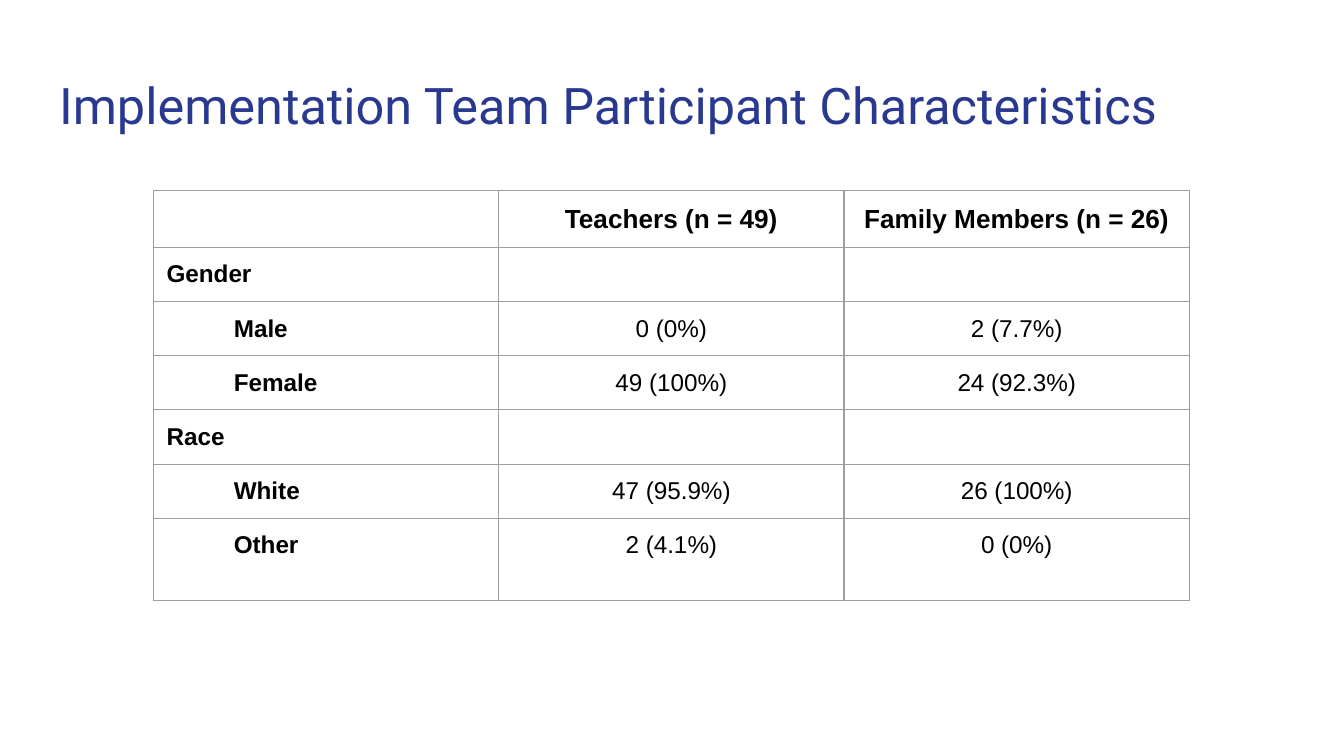
from lxml.etree import SubElement
from pptx import Presentation
from pptx.dml.color import RGBColor
from pptx.enum.text import MSO_ANCHOR as Anchor, MSO_AUTO_SIZE as AutoSize, PP_ALIGN as Align
from pptx.oxml.ns import qn
from pptx.util import Emu, Pt

EMU_PER_PX = 4572  # 200 px to the inch
TITLE_ONLY = 5

HEADINGS = ["", "Teachers (n = 49)", "Family Members (n = 26)"]
GROUPS = {
    "Gender": [("Male", "0 (0%)", "2 (7.7%)"), ("Female", "49 (100%)", "24 (92.3%)")],
    "Race": [("White", "47 (95.9%)", "26 (100%)"), ("Other", "2 (4.1%)", "0 (0%)")],
}


def px(length):
    return Emu(length * EMU_PER_PX)


def colour(hex_code):
    return RGBColor.from_string(hex_code)


class SlideBuilder:
    title_font, body_font = "Roboto", "Arial"
    title_colour, text_colour, border_colour = "2A3990", "000000", "9E9E9E"
    inset = 20

    def __init__(self, slide):
        self.slide = slide

    def set_insets(self, holder):
        holder.margin_left = holder.margin_right = px(self.inset)
        holder.margin_top = holder.margin_bottom = px(self.inset)

    def style(self, paragraph, name, size, hex_code, bold=False, align=Align.LEFT):
        paragraph.alignment = align
        font = paragraph.font
        font.name, font.size, font.bold = name, Pt(size), bold
        font.color.rgb = colour(hex_code)

    def title(self, text, left, top, width, height):
        heading = self.slide.shapes.title
        heading.left, heading.top = px(left), px(top)
        heading.width, heading.height = px(width), px(height)
        frame = heading.text_frame
        frame.text = text
        frame.word_wrap = True
        frame.auto_size = AutoSize.NONE
        frame.vertical_anchor = Anchor.TOP
        self.set_insets(frame)
        self.style(frame.paragraphs[0], self.title_font, 27, self.title_colour)

    def table(self, left, top, column_width, row_heights, columns):
        frame = self.slide.shapes.add_table(
            len(row_heights), columns, px(left), px(top),
            px(column_width * columns), px(sum(row_heights)))
        table = frame.table
        table.first_row = table.horz_banding = False
        for column in table.columns:
            column.width = px(column_width)
        for row, height in zip(table.rows, row_heights):
            row.height = px(height)
        for cell in table.iter_cells():
            self.border(cell)
            cell.fill.background()
        return table

    def border(self, cell):
        """Draw a thin line on all four sides; call before setting the fill."""
        properties = cell._tc.get_or_add_tcPr()
        for side in ("lnL", "lnR", "lnT", "lnB"):
            line = SubElement(properties, qn(f"a:{side}"), w=str(Pt(0.75)))
            fill = SubElement(line, qn("a:solidFill"))
            SubElement(fill, qn("a:srgbClr"), val=self.border_colour)

    def cell(self, cell, text, size=13, bold=False, align=Align.LEFT, indent=0):
        cell.text = text
        self.set_insets(cell)
        paragraph = cell.text_frame.paragraphs[0]
        self.style(paragraph, self.body_font, size, self.text_colour, bold, align)
        if indent:
            properties = paragraph._p.get_or_add_pPr()
            properties.set("marL", str(px(indent)))
            properties.set("indent", "0")


def main():
    deck = Presentation()
    deck.slide_width, deck.slide_height = px(2000), px(1125)
    builder = SlideBuilder(deck.slides.add_slide(deck.slide_layouts[TITLE_ONLY]))
    builder.title("Implementation Team Participant Characteristics", 68, 90, 1864, 132)

    characteristics = builder.table(228, 284, 514, [84] + [80] * 5 + [122], len(HEADINGS))
    for column, heading in enumerate(HEADINGS):
        if heading:
            builder.cell(characteristics.cell(0, column), heading, 14, True, Align.CENTER)

    row = 1
    for group, categories in GROUPS.items():
        builder.cell(characteristics.cell(row, 0), group, bold=True)
        for row, (category, *counts) in enumerate(categories, row + 1):
            builder.cell(characteristics.cell(row, 0), category, bold=True, indent=100)
            for column, count in enumerate(counts, 1):
                builder.cell(characteristics.cell(row, column), count, align=Align.CENTER)
        row += 1

    deck.save("out.pptx")


if __name__ == "__main__":
    main()
